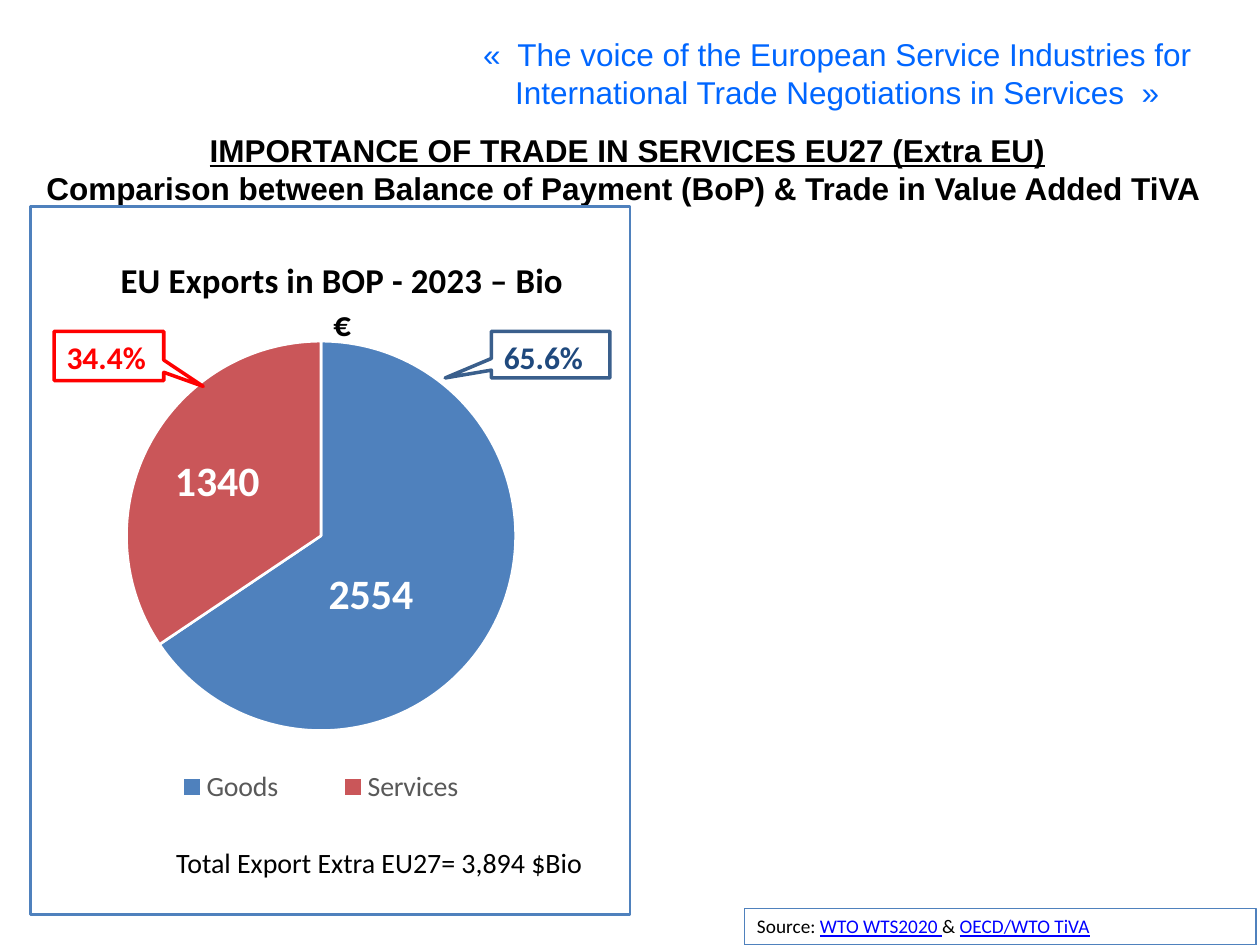
from lxml.etree import SubElement
from pptx import Presentation
from pptx.chart.data import CategoryChartData
from pptx.dml.color import RGBColor
from pptx.enum.chart import XL_CHART_TYPE, XL_LABEL_POSITION, XL_LEGEND_POSITION
from pptx.enum.shapes import MSO_SHAPE
from pptx.enum.text import MSO_ANCHOR, PP_ALIGN
from pptx.oxml import parse_xml
from pptx.oxml.ns import nsdecls, qn
from pptx.util import Inches, Pt

BLUE, RED, WHITE, BLACK, LINK = "4F81BD", "CA5659", "FFFFFF", "000000", "0000FF"


def color(code):
    """Turn a hex string into a colour."""
    return RGBColor.from_string(code)


def style(font, size, tint=BLACK, name="Calibri", bold=False, line=False):
    """Set the look of a font."""
    font.size, font.name, font.bold = Pt(size), name, bold
    font.underline = line
    font.color.rgb = color(tint)


def write(shape, text, align=PP_ALIGN.LEFT, **form):
    """Add a run of text to the first paragraph of a shape."""
    frame = shape.text_frame
    frame.word_wrap = True
    frame.vertical_anchor = MSO_ANCHOR.TOP
    para = frame.paragraphs[0]
    para.alignment = align
    run = para.add_run()
    run.text = text
    style(run.font, **form)


def place(shape, *spot):
    """Move and size a shape in inches."""
    shape.left, shape.top, shape.width, shape.height = map(Inches, spot)


def label(slide, spot, text, **form):
    """Add a text box."""
    write(slide.shapes.add_textbox(*map(Inches, spot)), text, **form)


def panel(slide, kind, spot, edge, width):
    """Add a white shape with a coloured edge."""
    shape = slide.shapes.add_shape(kind, *map(Inches, spot))
    shape.shadow.inherit = False
    shape.fill.solid()
    shape.fill.fore_color.rgb = color(WHITE)
    shape.line.color.rgb = color(edge)
    shape.line.width = Pt(width)
    return shape


def callout(slide, spot, tip, text, edge, tint):
    """Add a share callout that points at its slice."""
    shape = panel(slide, MSO_SHAPE.RECTANGULAR_CALLOUT, spot, edge, 2)
    shape.adjustments[0], shape.adjustments[1] = tip
    write(shape, text, size=18, tint=tint, bold=True)


def layout(parent, after, **spots):
    """Put a manual layout behind a chart element."""
    for old in parent.findall(qn("c:layout")):
        parent.remove(old)
    node = parse_xml(f"<c:layout {nsdecls('c')}><c:manualLayout/></c:layout>")
    for tag, val in spots.items():
        SubElement(node[0], qn(f"c:{tag}")).set("val", str(val))
    if after is None:
        parent.insert(0, node)
    else:
        after.addnext(node)


def frame(chart):
    """Give the chart area a white fill and a blue border."""
    area = parse_xml(
        f"<c:spPr {nsdecls('c', 'a')}>"
        f'<a:solidFill><a:srgbClr val="{WHITE}"/></a:solidFill>'
        f'<a:ln w="{Pt(1.5)}"><a:solidFill><a:srgbClr val="{BLUE}"/></a:solidFill></a:ln>'
        "</c:spPr>")
    chart.element.find(qn("c:chart")).addnext(area)


def slices(series):
    """Colour the slices and shift their value labels."""
    looks = [(BLUE, -0.06, 0.02), (RED, -0.03, -0.01)]
    for index, (tint, x, y) in enumerate(looks):
        point = series.points[index]
        point.format.fill.solid()
        point.format.fill.fore_color.rgb = color(tint)
        point.format.line.color.rgb = color(WHITE)
        point.format.line.width = Pt(1.5)
        style(point.data_label.font, 24, WHITE, bold=True)
        point.data_label.position = XL_LABEL_POSITION.CENTER
    nodes = series.data_labels._element.findall(qn("c:dLbl"))
    for node, (tint, x, y) in zip(nodes, looks):
        layout(node, node.find(qn("c:idx")), x=x, y=y)


def pie(slide, spot):
    """Add the export pie."""
    data = CategoryChartData()
    data.categories = ["Goods", "Services"]
    data.add_series("Series 1", (2554, 1340))
    chart = slide.shapes.add_chart(XL_CHART_TYPE.PIE, *map(Inches, spot), data).chart
    style(chart.font, 10)
    frame(chart)

    chart.has_title = True
    head = chart.chart_title
    run = head.text_frame.paragraphs[0].add_run()
    run.text = "EU Exports in BOP - 2023 – Bio €"
    style(run.font, 20, bold=True)
    title = head._element
    layout(title, title.find(qn("c:tx")), xMode="edge", yMode="edge", x=0.14, y=0.06)

    chart.has_legend = True
    key = chart.legend
    key.position = XL_LEGEND_POSITION.BOTTOM
    key.include_in_layout = False
    style(key.font, 16, "595959")
    layout(key._element, key._element.find(qn("c:legendPos")),
           xMode="edge", yMode="edge", x=0.16, y=0.79, w=0.65, h=0.06)

    plot = chart.plots[0]
    plot.vary_by_categories = True
    series = plot.series[0]
    marks = series.data_labels
    marks.show_value = True
    style(marks.font, 24, WHITE, bold=True)
    slices(series)
    layout(chart.element.find(".//" + qn("c:plotArea")), None, layoutTarget="inner",
           xMode="edge", yMode="edge", x=0.16, y=0.19, w=0.65, h=0.55)


def main():
    """Build the slide."""
    deck = Presentation()
    deck.slide_width, deck.slide_height = Inches(10), Inches(7.5)
    slide = deck.slides.add_slide(deck.slide_layouts[5])
    label(slide, (3.52, 0.23, 6.25, 0.71),
          "«  The voice of the European Service Industries for "
          "International Trade Negotiations in Services  »",
          align=PP_ALIGN.CENTER, size=18, tint="0066FF", name="Arial")

    title = slide.shapes.title
    place(title, 0, 0.99, 9.96, 0.98)
    form = dict(align=PP_ALIGN.CENTER, size=18, name="Arial", bold=True)
    write(title, "IMPORTANCE OF TRADE IN SERVICES EU27 (Extra EU)", line=True, **form)
    title.text_frame.paragraphs[0].add_line_break()
    write(title, "Comparison between Balance of Payment (BoP) & "
          "Trade in Value Added TiVA ", **form)

    source = panel(slide, MSO_SHAPE.RECTANGLE, (5.91, 7.21, 4.06, 0.29), BLUE, 0.75)
    for text, linked in [("Source: ", False), ("WTO WTS2020 ", True),
                         ("& ", False), ("OECD/WTO TiVA", True)]:
        write(source, text, size=11, tint=LINK if linked else BLACK, line=linked)

    pie(slide, (0.23, 1.63, 4.78, 5.64))
    callout(slide, (0.43, 2.63, 0.87, 0.39), (0.86, 0.62), "34.4%", "FF0000", "FF0000")
    callout(slide, (3.9, 2.63, 0.94, 0.37), (-0.89, 0.5), "65.6%", "3A5F8C", "1F497D")
    label(slide, (1.3, 6.66, 3.48, 0.37), "Total Export Extra EU27= 3,894 $Bio", size=16)
    deck.save("out.pptx")


if __name__ == "__main__":
    main()
